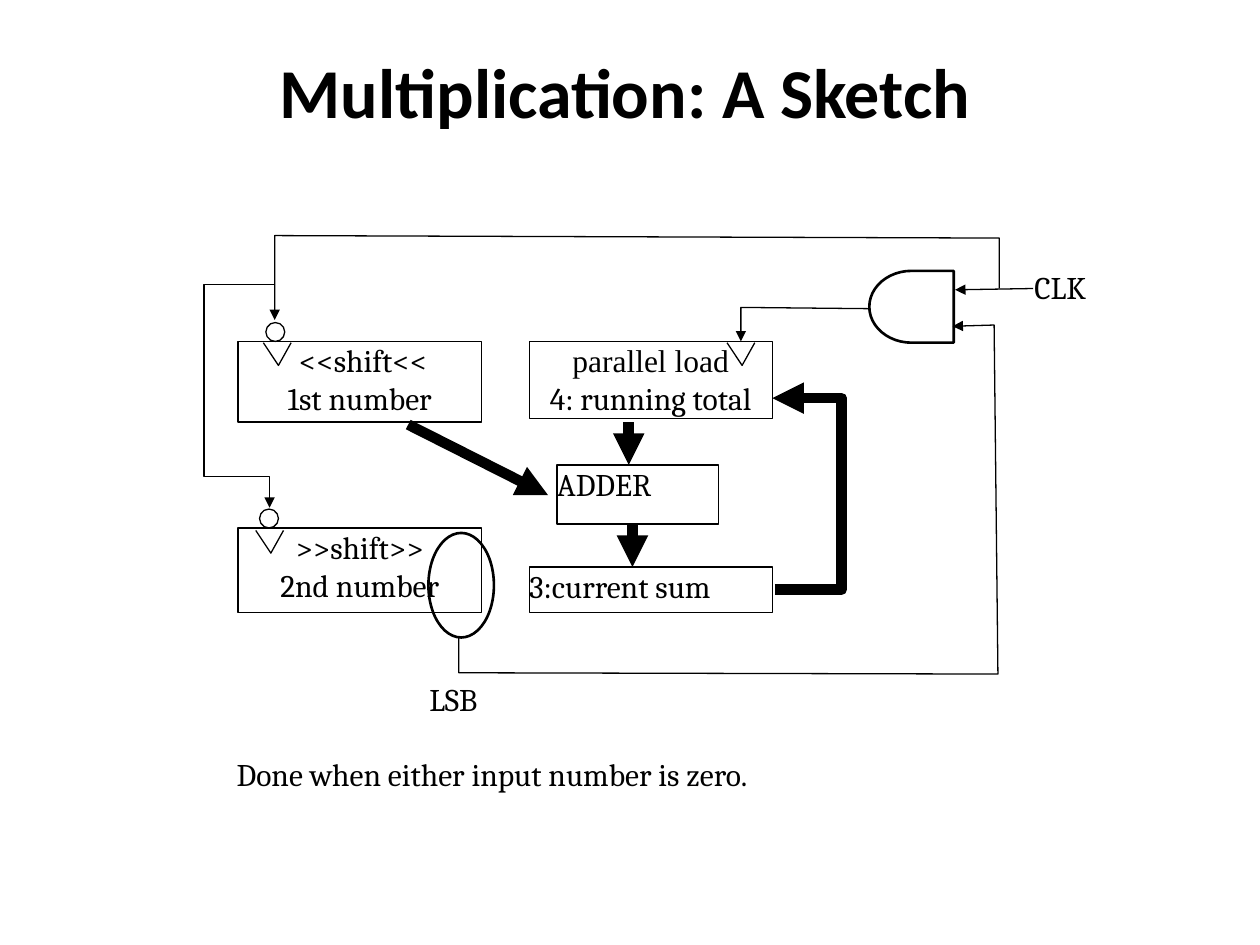
from lxml.etree import SubElement
from pptx import Presentation
from pptx.dml.color import RGBColor
from pptx.enum.shapes import MSO_CONNECTOR, MSO_SHAPE as Shape
from pptx.enum.text import MSO_ANCHOR as Anchor, PP_ALIGN as Align
from pptx.oxml.ns import qn
from pptx.util import Inches, Pt

COLORS = {"ink": "000000", "paper": "FFFFFF"}
SERIF, TIMES, SANS = "Cambria", "Times New Roman", "Calibri"
THIN, MEDIUM, BUS = 0.75, 1.5, 6

TITLE = "Multiplication: A Sketch"

# Boxes: left, top, width, height, alignment, (text, font) lines
REGISTERS = [
    (1.89, 2.71, 1.93, 0.64, Align.CENTER, [(" <<shift<<", SERIF), ("1st number", SERIF)]),
    (1.89, 4.19, 1.93, 0.67, Align.CENTER, [(">>shift>>", SERIF), ("2nd number", SERIF)]),
    (4.2, 4.5, 1.93, 0.36, Align.LEFT, [("3:current sum", SERIF)]),
    (4.2, 2.71, 1.93, 0.61, Align.CENTER, [("parallel load", TIMES), ("4: running total", SERIF)]),
    (4.42, 3.69, 1.28, 0.47, Align.LEFT, [("ADDER", SERIF)]),
]
# Labels: left, top, width, height, side inset, top inset, text
LABELS = [
    (8.21, 2.13, 0.56, 0.3, 0, 0, "CLK"),
    (3.31, 5.35, 0.62, 0.4, 0.1, 0.05, "LSB"),
    (1.78, 5.94, 4.48, 0.4, 0.1, 0.05, "Done when either input number is zero."),
]
# Straight arrows: start, end, width
ARROWS = [
    ((3.24, 3.37), (4.35, 3.93), BUS),
    ((4.99, 3.35), (4.99, 3.69), BUS),
    ((5.02, 4.16), (5.02, 4.5), BUS),
    ((8.2, 2.29), (7.58, 2.3), THIN),
]
# Bent wires: points, width
SUM_FEEDBACK = ([(6.15, 4.68), (6.68, 4.68), (6.68, 3.16), (6.13, 3.16)], BUS)
WIRES = [
    ([(2.18, 2.26), (1.62, 2.26), (1.62, 3.78), (2.14, 3.78), (2.14, 4.03)], THIN),
    ([(7.93, 2.29), (7.93, 1.89), (2.18, 1.87), (2.18, 2.54)], THIN),
    ([(6.89, 2.45), (5.88, 2.44), (5.88, 2.71)], THIN),
    ([(3.64, 5.06), (3.64, 5.34), (7.92, 5.35), (7.89, 2.58), (7.56, 2.59)], THIN),
]
CLOCK_NOTCHES = [(2.03, 4.21), (5.77, 2.72), (2.09, 2.72)]
INVERTERS = [(2.06, 4.04), (2.11, 2.56)]
INVERTER_SIZE = 0.15


def color(name):
    return RGBColor.from_string(COLORS[name])


def write(frame, lines, size=18, align=Align.LEFT, anchor=Anchor.TOP,
          bold=False, inset=(0, 0)):
    frame.word_wrap = True
    frame.vertical_anchor = anchor
    frame.margin_left = frame.margin_right = Inches(inset[0])
    frame.margin_top = frame.margin_bottom = Inches(inset[1])
    for index, (text, font) in enumerate(lines):
        paragraph = frame.add_paragraph() if index else frame.paragraphs[0]
        paragraph.alignment = align
        run = paragraph.add_run()
        run.text = text
        run.font.name, run.font.size, run.font.bold = font, Pt(size), bold
        run.font.color.rgb = color("ink")


def draw_line(shape, width, arrow=False):
    shape.line.color.rgb = color("ink")
    shape.line.width = Pt(width)
    if arrow:
        SubElement(shape.line._get_or_add_ln(), qn("a:tailEnd"), type="triangle")


def add_outline(kind, left, top, width, height, line_width=THIN):
    shape = slide.shapes.add_shape(kind, *map(Inches, (left, top, width, height)))
    shape.shadow.inherit = False
    shape.fill.background()
    draw_line(shape, line_width)
    return shape


def add_path(points, width, arrow=True):
    start, *rest = [(Inches(x), Inches(y)) for x, y in points]
    builder = slide.shapes.build_freeform(*start)
    builder.add_line_segments(rest, close=False)
    shape = builder.convert_to_shape()
    shape.shadow.inherit = False
    shape.fill.background()
    draw_line(shape, width, arrow)


def add_arrow(start, end, width):
    connector = slide.shapes.add_connector(
        MSO_CONNECTOR.STRAIGHT, *map(Inches, (*start, *end)))
    draw_line(connector, width, arrow=True)
    SubElement(connector._element.spPr, qn("a:effectLst"))


presentation = Presentation()
presentation.slide_width, presentation.slide_height = Inches(10), Inches(7.5)
slide = presentation.slides.add_slide(presentation.slide_layouts[5])

# Title
title = slide.shapes.title
title.left, title.top, title.width, title.height = map(Inches, (1.63, 0.33, 6.66, 0.77))
write(title.text_frame, [(TITLE, SANS)], size=40, align=Align.CENTER,
      anchor=Anchor.MIDDLE, bold=True, inset=(0.1, 0.05))

# Registers and adder
for *box, align, lines in REGISTERS:
    write(add_outline(Shape.RECTANGLE, *box).text_frame, lines, align=align)

# Data paths, least significant bit marker and clock inputs
for arrow in ARROWS:
    add_arrow(*arrow)
add_path(*SUM_FEEDBACK)
add_outline(Shape.OVAL, 3.4, 4.23, 0.52, 0.83, MEDIUM)
for x, y in CLOCK_NOTCHES:
    add_path([(x, y), (x + 0.12, y + 0.18), (x + 0.22, y)], THIN, arrow=False)
for x, y in INVERTERS:
    add_outline(Shape.OVAL, x, y, INVERTER_SIZE, INVERTER_SIZE)

# Gate facing left
gate = add_outline(Shape.FLOWCHART_DELAY, 6.9, 2.15, 0.67, 0.57, MEDIUM)
gate.fill.solid()
gate.fill.fore_color.rgb = color("paper")
gate._element.spPr.xfrm.set("flipH", "1")

# Control wires
for wire in WIRES:
    add_path(*wire)

# Labels
for *box, side, top, text in LABELS:
    label = slide.shapes.add_textbox(*map(Inches, box))
    write(label.text_frame, [(text, SERIF)], inset=(side, top))

presentation.save("out.pptx")
